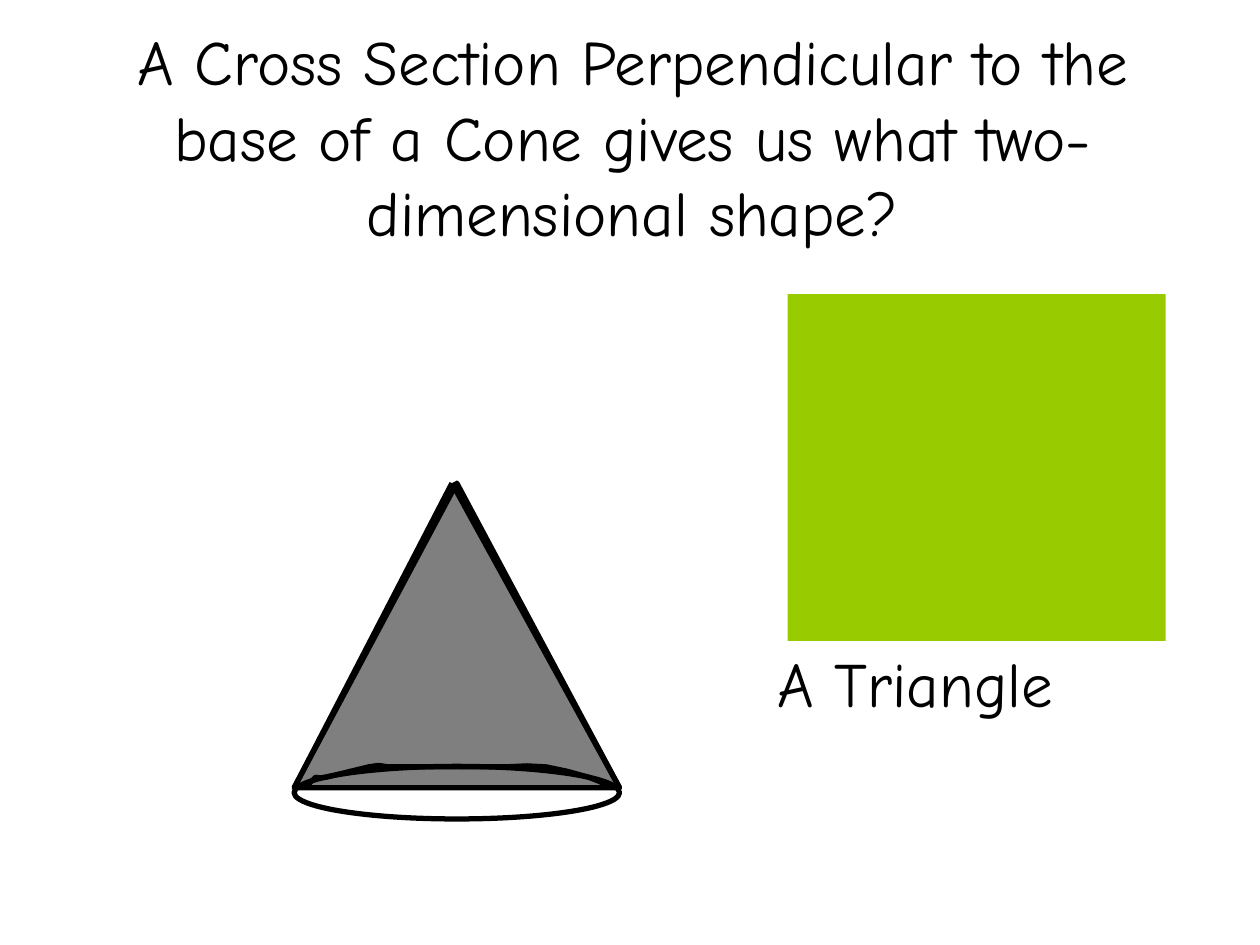
from lxml.etree import SubElement
from pptx import Presentation
from pptx.dml.color import RGBColor
from pptx.enum.shapes import MSO_CONNECTOR, MSO_SHAPE
from pptx.enum.text import MSO_ANCHOR, MSO_AUTO_SIZE, PP_ALIGN
from pptx.oxml.ns import qn
from pptx.util import Cm, Pt

COLORS = {"ink": "000000", "square": "99CC00"}
FONT = "Comic Neue"
RIM = [(6.35, 6.14), (6.17, 6.02), (5.94, 5.93), (5.51, 5.81), (5.08, 5.72),
       (4.7, 5.7), (4.24, 5.72), (2.54, 5.72), (1.9, 5.72), (1.7, 5.69),
       (1.5, 5.72), (0.64, 5.93), (0.52, 5.94), (0.43, 5.93), (0.22, 6.14)]


def rgb(name):
    """Return the named colour."""
    return RGBColor.from_string(COLORS[name])


def outline(sp):
    """Give a shape or connector the 3 pt ink line."""
    sp.line.color.rgb = rgb("ink")
    sp.line.width = Pt(3)


def add_shape(slide, kind, x, y, w, h, fill=None):
    """Add a preset shape without shadow, filled or hollow."""
    sp = slide.shapes.add_shape(kind, Cm(x), Cm(y), Cm(w), Cm(h))
    sp.shadow.inherit = False
    if fill:
        sp.fill.solid()
        sp.fill.fore_color.rgb = rgb(fill)
    else:
        sp.fill.background()
    return sp


def add_text(slide, text, x, y, w, h, align=PP_ALIGN.LEFT):
    """Add a 36 pt text box and return its text frame."""
    tf = slide.shapes.add_textbox(Cm(x), Cm(y), Cm(w), Cm(h)).text_frame
    p = tf.paragraphs[0]
    p.text = text
    p.alignment = align
    p.font.name = FONT
    p.font.size = Pt(36)
    p.font.color.rgb = rgb("ink")
    return tf


def add_title(slide, x, y, w, h):
    """Place the centred question."""
    tf = add_text(slide, "A Cross Section Perpendicular to the base of a Cone "
                  "gives us what two-dimensional shape?", x, y, w, h, PP_ALIGN.CENTER)
    tf.word_wrap = True
    tf.vertical_anchor = MSO_ANCHOR.MIDDLE


def add_cone(slide, x, y, w, h):
    """Draw the cone with its shaded triangular section."""
    base_h = 1.06
    base_y = y + h - base_h / 2 - 0.1
    section = add_shape(slide, MSO_SHAPE.ISOSCELES_TRIANGLE, x, y, w, base_y - y, "ink")
    color = section.fill._xPr.find(qn("a:solidFill"))[0]
    SubElement(color, qn("a:alpha"), val="50000")
    outline(section)
    outline(add_shape(slide, MSO_SHAPE.OVAL, x, y + h - base_h, w, base_h))

    points = [(Cm(x + dx), Cm(y + dy)) for dx, dy in RIM]
    builder = slide.shapes.build_freeform(*points[0])
    builder.add_line_segments(points[1:], close=False)
    rim = builder.convert_to_shape()
    rim.shadow.inherit = False
    rim.fill.background()
    outline(rim)

    apex_x = x + w / 2 - 0.1
    for start, end in (((x + w, base_y), (apex_x, y)), ((apex_x, y), (x, base_y))):
        side = slide.shapes.add_connector(
            MSO_CONNECTOR.STRAIGHT, *(Cm(v) for v in start + end))
        SubElement(side._element.spPr, qn("a:effectLst"))
        outline(side)


def add_answer(slide, x, y, w, h):
    """Place the green square with the answer below it."""
    square = add_shape(slide, MSO_SHAPE.RECTANGLE, x, y, w, h, "square")
    square.line.fill.background()
    tf = add_text(slide, "A Triangle", x - 0.46, y + h - 0.05, 6.68, 1.78)
    tf.word_wrap = False
    tf.auto_size = MSO_AUTO_SIZE.SHAPE_TO_FIT_TEXT


def main():
    """Build and save the slide."""
    prs = Presentation()
    prs.slide_width, prs.slide_height = Cm(25.4), Cm(19.05)
    slide = prs.slides.add_slide(prs.slide_layouts[6])
    add_title(slide, 1.17, 0.2, 23.16, 5.08)
    add_cone(slide, 5.93, 9.74, 6.56, 6.77)
    add_answer(slide, 15.88, 5.93, 7.62, 6.99)
    prs.save("out.pptx")


if __name__ == "__main__":
    main()
